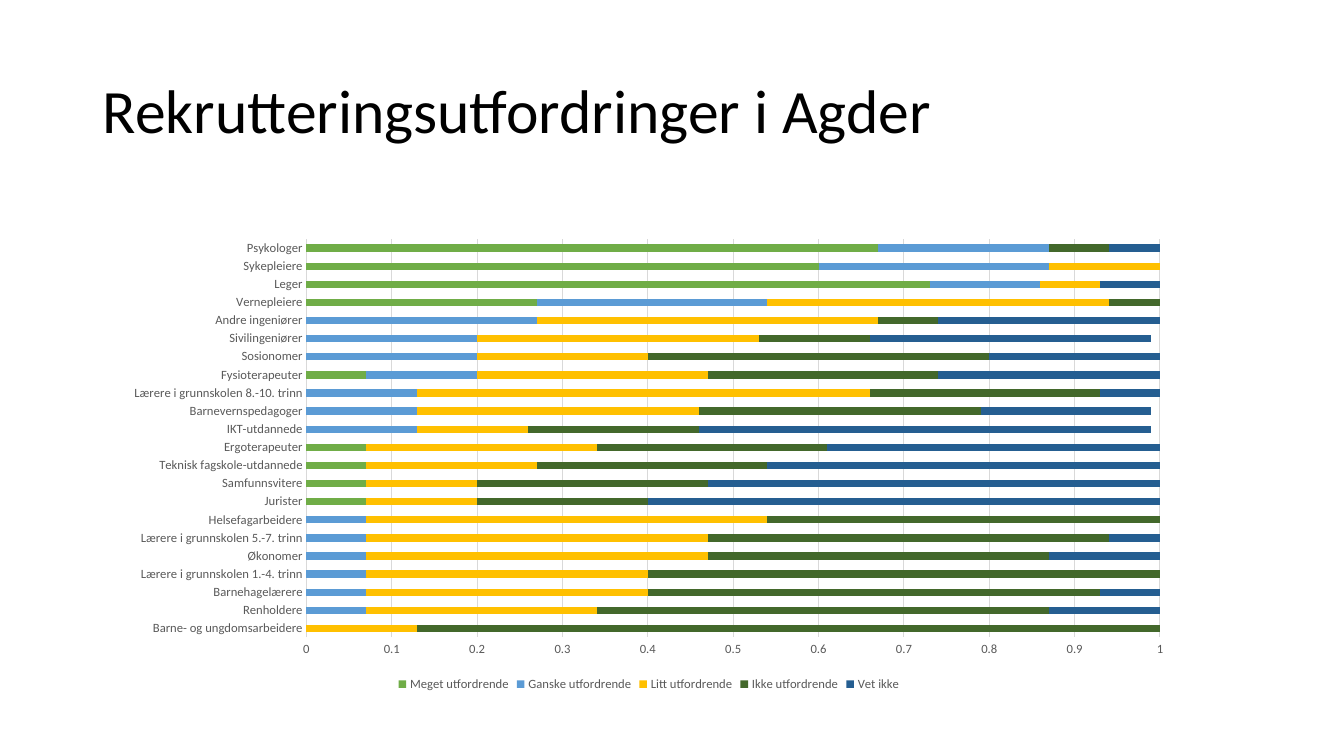
import pptx
import pptx.chart.data
import pptx.dml.color
import pptx.enum.chart
import pptx.enum.text
import pptx.util

RGBColor = pptx.dml.color.RGBColor
BLACK = RGBColor(0x00, 0x00, 0x00)
GREY = RGBColor(0x59, 0x59, 0x59)
LIGHT_GREY = RGBColor(0xD9, 0xD9, 0xD9)
GREEN = RGBColor(0x70, 0xAD, 0x47)
BLUE = RGBColor(0x5B, 0x9B, 0xD5)
YELLOW = RGBColor(0xFF, 0xC0, 0x00)
DARK_GREEN = RGBColor(0x43, 0x68, 0x2B)
DARK_BLUE = RGBColor(0x25, 0x5E, 0x91)

FONT = "Calibri"
EMU_PER_PX = 9144
TITLE_ONLY = 5
RESPONDENTS = 15

ANSWERS = [
    ("Meget utfordrende", GREEN),
    ("Ganske utfordrende", BLUE),
    ("Litt utfordrende", YELLOW),
    ("Ikke utfordrende", DARK_GREEN),
    ("Vet ikke", DARK_BLUE),
]

PROFESSIONS = [
    ("Psykologer", (10, 3, 0, 1, 1)),
    ("Sykepleiere", (9, 4, 2, 0, 0)),
    ("Leger", (11, 2, 1, 0, 1)),
    ("Vernepleiere", (4, 4, 6, 1, 0)),
    ("Andre ingeniører", (0, 4, 6, 1, 4)),
    ("Sivilingeniører", (0, 3, 5, 2, 5)),
    ("Sosionomer", (0, 3, 3, 6, 3)),
    ("Fysioterapeuter", (1, 2, 4, 4, 4)),
    ("Lærere i grunnskolen 8.-10. trinn", (0, 2, 8, 4, 1)),
    ("Barnevernspedagoger", (0, 2, 5, 5, 3)),
    ("IKT-utdannede", (0, 2, 2, 3, 8)),
    ("Ergoterapeuter", (1, 0, 4, 4, 6)),
    ("Teknisk fagskole-utdannede", (1, 0, 3, 4, 7)),
    ("Samfunnsvitere", (1, 0, 2, 4, 8)),
    ("Jurister", (1, 0, 2, 3, 9)),
    ("Helsefagarbeidere", (0, 1, 7, 7, 0)),
    ("Lærere i grunnskolen 5.-7. trinn", (0, 1, 6, 7, 1)),
    ("Økonomer", (0, 1, 6, 6, 2)),
    ("Lærere i grunnskolen 1.-4. trinn", (0, 1, 5, 9, 0)),
    ("Barnehagelærere", (0, 1, 5, 8, 1)),
    ("Renholdere", (0, 1, 4, 8, 2)),
    ("Barne- og ungdomsarbeidere", (0, 0, 2, 13, 0)),
]


def px(length):
    return pptx.util.Emu(length * EMU_PER_PX)


def set_font(font, size, color):
    font.name = FONT
    font.size = pptx.util.Pt(size)
    font.color.rgb = color


def write_text(frame, text, size=18, color=BLACK, line_spacing=1.0,
               align=pptx.enum.text.PP_ALIGN.LEFT,
               anchor=pptx.enum.text.MSO_ANCHOR.MIDDLE):
    frame.word_wrap = True
    frame.vertical_anchor = anchor
    para = frame.paragraphs[0]
    para.alignment = align
    para.line_spacing = line_spacing
    span = para.add_run()
    span.text = text
    set_font(span.font, size, color)


class SlideBuilder:
    def __init__(self, deck):
        self.page = deck.slides.add_slide(deck.slide_layouts[TITLE_ONLY])
        self.label_size = 9
        self.label_color = GREY
        self.rule_color = LIGHT_GREY
        self.rule_width = pptx.util.Pt(0.75)

    def title(self, text, left, top, width, height):
        box = self.page.shapes.title
        box.left, box.top = px(left), px(top)
        box.width, box.height = px(width), px(height)
        write_text(box.text_frame, text, size=44, line_spacing=0.9)

    def rule(self, line):
        line.color.rgb = self.rule_color
        line.width = self.rule_width

    def axis(self, axis):
        axis.major_tick_mark = pptx.enum.chart.XL_TICK_MARK.NONE
        axis.minor_tick_mark = pptx.enum.chart.XL_TICK_MARK.NONE
        set_font(axis.tick_labels.font, self.label_size, self.label_color)

    def stacked_bars(self, rows, answers, left, top, width, height):
        data = pptx.chart.data.CategoryChartData()
        data.categories = [name for name, counts in rows]
        for index, (answer, color) in enumerate(answers):
            shares = [round(counts[index] / RESPONDENTS, 2) for name, counts in rows]
            data.add_series(answer, shares)
        chart = self.page.shapes.add_chart(
            pptx.enum.chart.XL_CHART_TYPE.BAR_STACKED,
            px(left), px(top), px(width), px(height), data).chart
        set_font(chart.font, 10, BLACK)
        chart.has_title = False

        plot = chart.plots[0]
        plot.gap_width = 150
        plot.overlap = 100
        plot.vary_by_categories = False
        for series, (answer, color) in zip(plot.series, answers):
            series.format.fill.solid()
            series.format.fill.fore_color.rgb = color

        self.axis(chart.category_axis)
        self.rule(chart.category_axis.format.line)
        values = chart.value_axis
        self.axis(values)
        values.minimum_scale, values.maximum_scale = 0, 1
        values.major_unit = 0.1
        values.format.line.fill.background()
        values.has_major_gridlines = True
        self.rule(values.major_gridlines.format.line)

        chart.has_legend = True
        chart.legend.position = pptx.enum.chart.XL_LEGEND_POSITION.BOTTOM
        chart.legend.include_in_layout = False
        set_font(chart.legend.font, self.label_size, self.label_color)


def main():
    deck = pptx.Presentation()
    deck.slide_width, deck.slide_height = px(1333), px(750)
    builder = SlideBuilder(deck)
    builder.title("Rekrutteringsutfordringer i Agder", 92, 40, 1150, 145)
    builder.stacked_bars(PROFESSIONS[::-1], ANSWERS, 112, 228, 1063, 462)
    deck.save("out.pptx")


if __name__ == "__main__":
    main()
